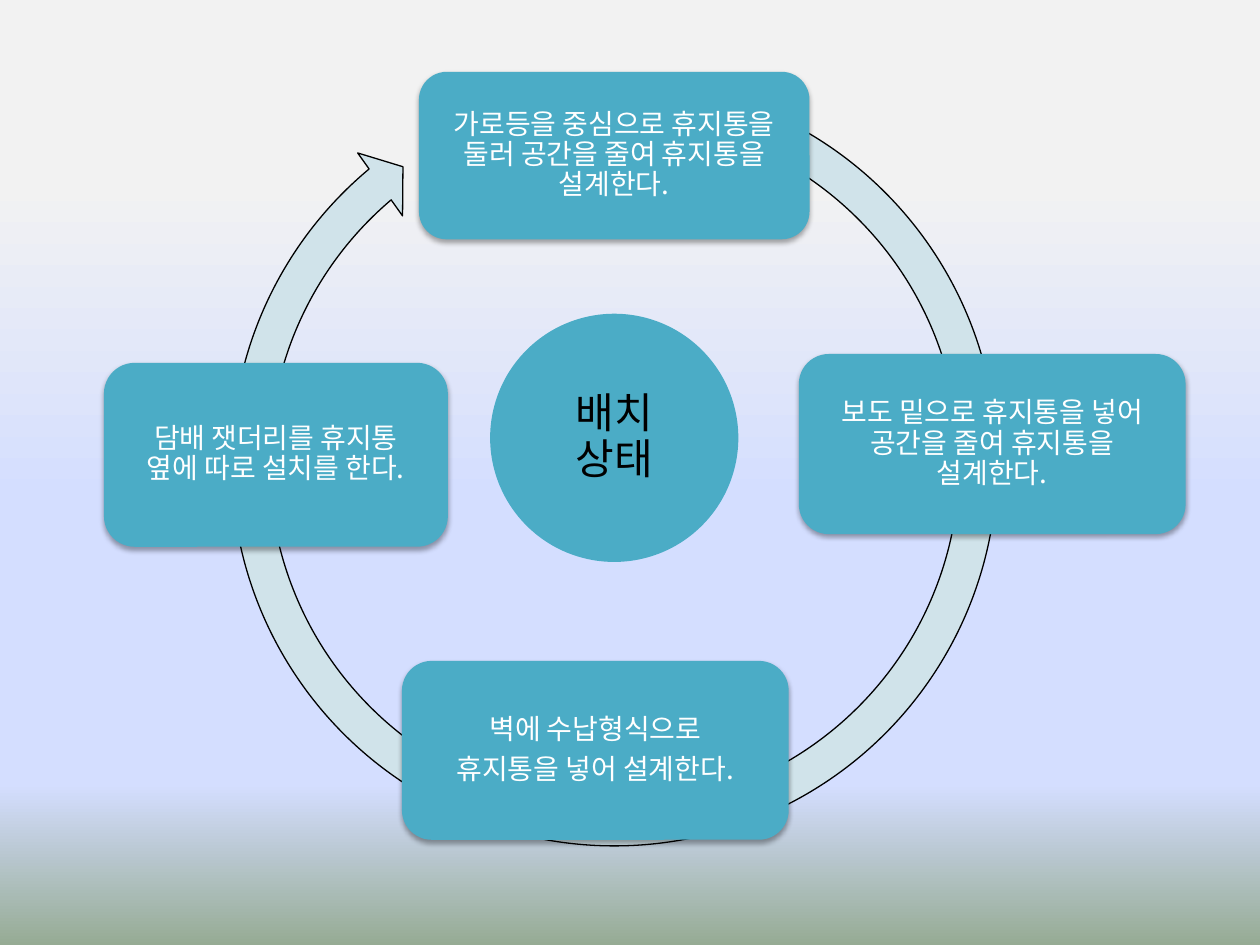
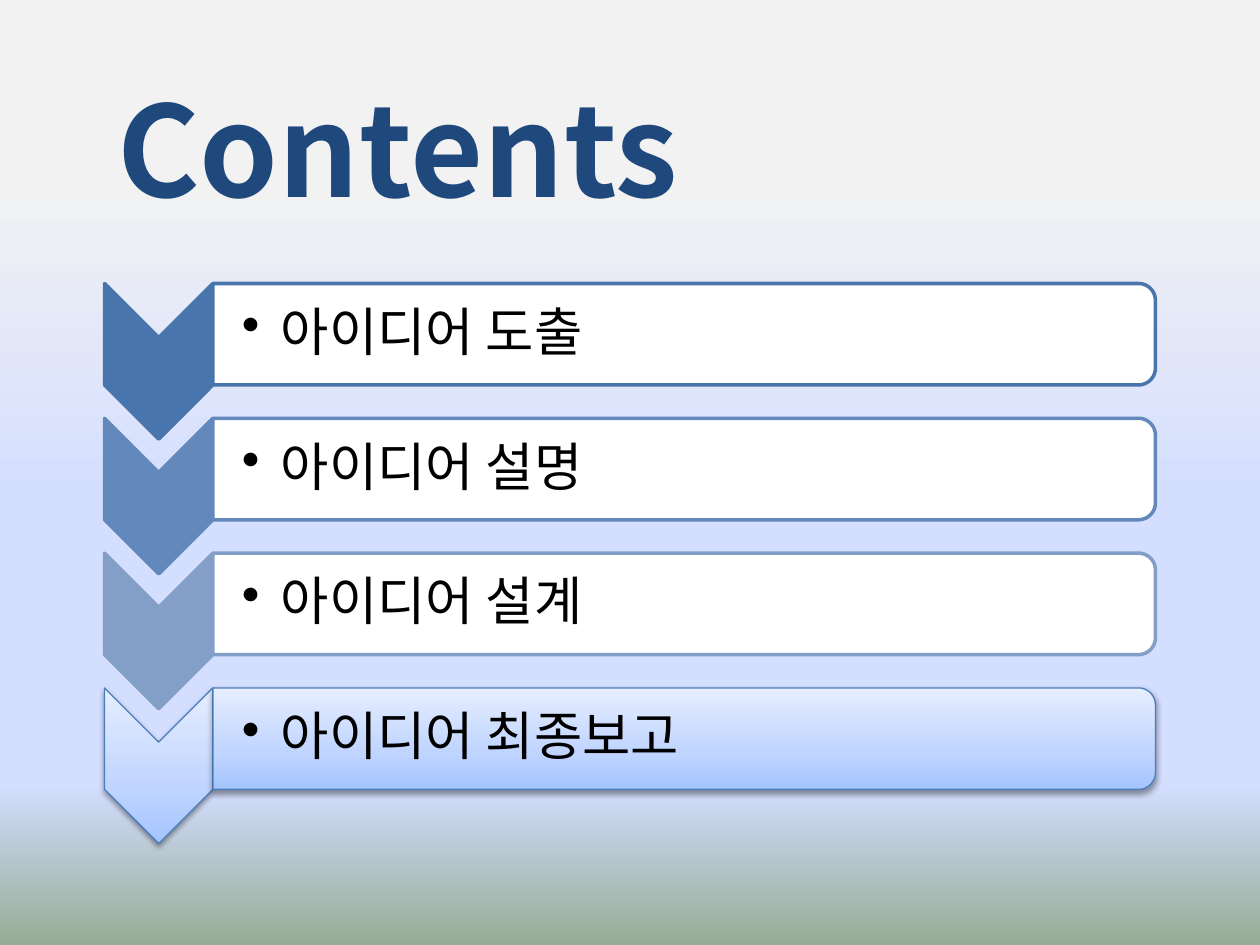
from math import cos, pi, sin

from lxml import etree
from pptx import Presentation
from pptx.dml.color import RGBColor
from pptx.enum.shapes import MSO_SHAPE
from pptx.enum.text import MSO_ANCHOR, MSO_AUTO_SIZE, PP_ALIGN
from pptx.oxml.ns import qn
from pptx.util import Inches, Pt

OVAL = MSO_SHAPE.OVAL
ROUND = MSO_SHAPE.ROUNDED_RECTANGLE
ARROW = MSO_SHAPE.CIRCULAR_ARROW
LEFT, CENTER = PP_ALIGN.LEFT, PP_ALIGN.CENTER
TOP, MIDDLE = MSO_ANCHOR.TOP, MSO_ANCHOR.MIDDLE
FIXED = MSO_AUTO_SIZE.NONE

FONT = "Noto Sans CJK KR"
BLACK = RGBColor(0x00, 0x00, 0x00)
WHITE = RGBColor(0xFF, 0xFF, 0xFF)
NAVY = RGBColor(0x1F, 0x49, 0x7D)
TEAL = RGBColor(0x4B, 0xAC, 0xC6)
PALE = RGBColor(0xD0, 0xE3, 0xEA)
EDGE = RGBColor(0x4B, 0x7E, 0xBC)
STEPS = [RGBColor(0x48, 0x75, 0xAC), RGBColor(0x63, 0x89, 0xBC), RGBColor(0x83, 0x9E, 0xC7)]
MIST = RGBColor(0xF2, 0xF2, 0xF2)
SKY = RGBColor(0xD4, 0xDE, 0xFF)
MOSS = RGBColor(0x96, 0xAB, 0x94)
ICE = [(0, RGBColor(0xE6, 0xEE, 0xFF)), (65, RGBColor(0xBF, 0xD4, 0xFF)),
       (100, RGBColor(0xA4, 0xC4, 0xFF))]
DUSK = [(19, MIST), (53, SKY), (83, SKY), (100, MOSS)]

COLS, ROWS = 100, 75
CELL = Inches(0.1)


def cells(*sizes):
    return [round(size * CELL) for size in sizes]


def add(parent, tag, **attrs):
    return etree.SubElement(parent, qn(tag), {key: str(val) for key, val in attrs.items()})


def blend(fill, root, stops):
    fill.gradient()
    grad = root.find(".//" + qn("a:gradFill"))
    marks = grad.find(qn("a:gsLst"))
    for mark in list(marks):
        marks.remove(mark)
    for place, color in stops:
        add(add(marks, "a:gs", pos=place * 1000), "a:srgbClr", val=color)
    grad.find(qn("a:lin")).set("ang", str(90 * 60000))


def shade(shape, alpha):
    effects = shape._element.spPr.find(qn("a:effectLst"))
    shadow = add(effects, "a:outerShdw", blurRad=Pt(3.1), dist=Pt(1.7),
                 dir=90 * 60000, algn="ctr", rotWithShape=0)
    add(add(shadow, "a:srgbClr", val=BLACK), "a:alpha", val=alpha * 1000)


def paint(shape, fill, line=None, width=0.75, shadow=None):
    shape.shadow.inherit = False
    if isinstance(fill, list):
        blend(shape.fill, shape._element, fill)
    else:
        shape.fill.solid()
        shape.fill.fore_color.rgb = fill
    if line is None:
        shape.line.fill.background()
    else:
        shape.line.color.rgb = line
        shape.line.width = Pt(width)
    if shadow:
        shade(shape, shadow)


def write(shape, text, size, color, bold=False, align=CENTER, anchor=MIDDLE,
          pads=(1, 0.5, 1, 0.5), space=1.0, after=0, bullet=None, shift=0):
    frame = shape.text_frame
    frame.word_wrap = True
    frame.auto_size = FIXED
    frame.vertical_anchor = anchor
    (frame.margin_left, frame.margin_top,
     frame.margin_right, frame.margin_bottom) = cells(*pads)
    frame.text = text
    for num, para in enumerate(frame.paragraphs):
        para.alignment = align
        para.line_spacing = space
        para.space_after = Pt(size * after)
        props = para._p.get_or_add_pPr()
        if bullet:
            props.set("marL", str(Inches(0.31)))
            props.set("indent", str(-Inches(0.31)))
            add(props, "a:buChar", char=bullet)
        elif shift and num == 0:
            props.set("marL", "0")
            props.set("indent", str(cells(shift)[0]))
        font = para.runs[0].font
        font.size, font.bold, font.name = Pt(size), bold, FONT
        font.color.rgb = color
        add(para.runs[0]._r.rPr, "a:ea", typeface=FONT)


def outline(slide, points):
    dots = [tuple(cells(*point)) for point in points]
    pen = slide.shapes.build_freeform(*dots[0])
    pen.add_line_segments(dots[1:], close=True)
    return pen.convert_to_shape()


def cycle(slide, box, hub, nodes):
    left, top, wide, high = box
    mid_x, mid_y = left + wide / 2, top + high / 2

    def shape(kind, x, y, w, h):
        return slide.shapes.add_shape(kind, *cells(mid_x + x - w / 2, mid_y + y - h / 2, w, h))

    disc = shape(OVAL, 0, -2, 19.7, 19.7)
    paint(disc, TEAL)
    write(disc, hub, 24, BLACK, pads=[2.9] * 4, space=0.9, after=0.35)
    ring = shape(ARROW, 0, 0, wide, high)
    for num, value in enumerate((0.047, 2.729, 137.976, 174.08, 0.048)):
        ring.adjustments[num] = value
    paint(ring, PALE, BLACK)
    for text, place, shift in nodes:
        node = shape(ROUND, *place)
        paint(node, TEAL, shadow=35)
        write(node, text, 16, WHITE, pads=[1.4] * 4, space=0.9, after=0.35, shift=shift)


def chevron(slide, x, y, wide, high):
    notch = wide / 2
    return outline(slide, [(x + wide, y), (x + wide, y + high), (x + notch, y + high + notch),
                           (x, y + high), (x, y), (x + notch, y + notch)])


def bar(slide, x, y, wide, high):
    bend = high / 6
    right = x + wide - bend
    turns = [pi / 2 * step / 12 for step in range(13)]
    upper = [(right + bend * sin(turn), y + bend - bend * cos(turn)) for turn in turns]
    lower = [(px, 2 * y + high - py) for px, py in reversed(upper)]
    return outline(slide, [(x, y), *upper, *lower, (x, y + high)])


def agenda(slide, box, items):
    left, top, wide, high = box
    tab, row = 8.6, 8.05
    pitch = (high - row - tab / 2) / (len(items) - 1)
    for num, text in enumerate(items):
        y = top + num * pitch
        tip = chevron(slide, left, y, tab, row)
        slab = bar(slide, left + tab, y, wide - tab, row)
        if num < len(STEPS):
            paint(tip, STEPS[num], STEPS[num], 2)
            paint(slab, WHITE, STEPS[num], 2)
        else:
            for part in (tip, slab):
                paint(part, ICE, EDGE, shadow=38)
        write(slab, text, 30, BLACK, align=LEFT, pads=(2.3, 0.6, 0.6, 0.6),
              space=0.9, after=0.15, bullet="•")


def head(slide, box, text):
    title = slide.shapes.title
    title.left, title.top, title.width, title.height = cells(*box)
    write(title, text, 72, NAVY, bold=True, align=LEFT, anchor=TOP)


def main():
    prs = Presentation()
    prs.slide_width, prs.slide_height = cells(COLS, ROWS)
    master = prs.slide_master
    blend(master.background.fill, master._element, DUSK)

    slide = prs.slides.add_slide(prs.slide_layouts[6])
    cycle(slide, (16.8, 4.8, 63.9, 63.9), "배치상태", [
        ("가로등을 중심으로 휴지통을 둘러 공간을 줄여 휴지통을 설계한다.", (0, -24.4, 31, 13.3), 0),
        ("보도 밑으로 휴지통을 넣어 공간을 줄여 휴지통을 설계한다.", (30, -1.5, 30.7, 14.3), 0),
        ("벽에 수납형식으로\n휴지통을 넣어 설계한다.", (-1.5, 22.8, 30.7, 14.2), -2.5),
        ("담배 잿더리를 휴지통 옆에 따로 설치를 한다.", (-26.85, -0.65, 27.3, 14.6), 0),
    ])

    slide = prs.slides.add_slide(prs.slide_layouts[5])
    head(slide, (8.3, 5.2, 72.4, 19.9), "Contents")
    agenda(slide, (8.3, 22.5, 83.4, 44.45),
           ["아이디어 도출", "아이디어 설명", "아이디어 설계", "아이디어 최종보고"])
    prs.save("out.pptx")


if __name__ == "__main__":
    main()
